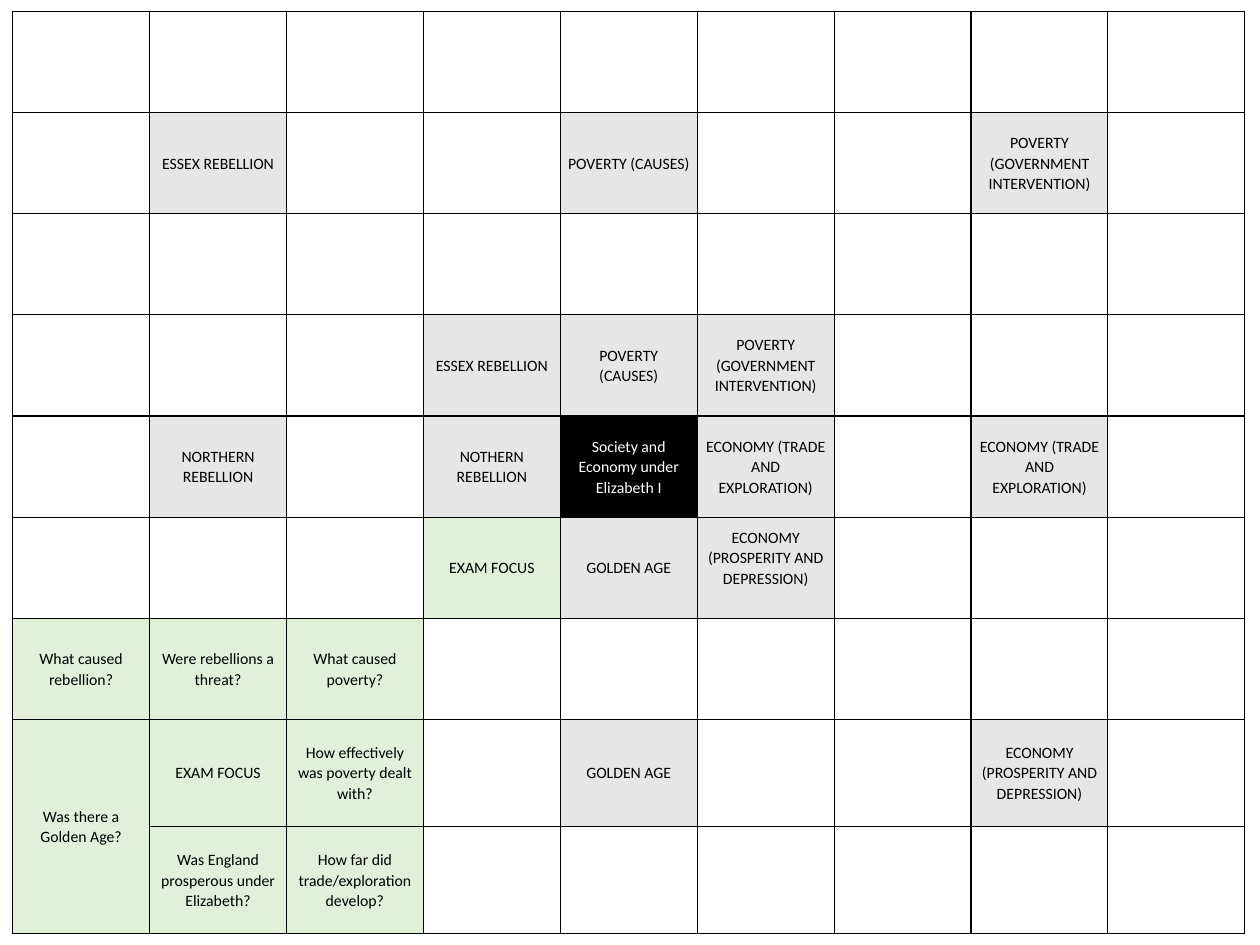
from pptx import Presentation
from pptx.dml.color import RGBColor
from pptx.enum.text import MSO_ANCHOR, PP_ALIGN
from pptx.oxml import parse_xml
from pptx.oxml.ns import nsdecls
from pptx.util import Inches, Pt

MIDDLE = MSO_ANCHOR.MIDDLE
CENTER = PP_ALIGN.CENTER

COLORS = {"topic": "E7E6E6", "exam": "E2F0D9", "centre": "000000",
          "ink": "000000", "light": "FFFFFF"}

# Grid: seven equal rows above two taller ones
COLUMNS, ROWS = 9, 9
LEFT, TOP, WIDTH, HEIGHT = 0.1, 0.09, 9.78, 7.32
TALL_ROWS, TALL_HEIGHT = 2, 0.85
ROW_HEIGHT = (HEIGHT - TALL_ROWS * TALL_HEIGHT) / (ROWS - TALL_ROWS)
BORDER_WIDTH = Pt(0.75)

# Cell contents by (row, column)
TOPICS = {
    (1, 1): "ESSEX REBELLION",
    (1, 4): "POVERTY (CAUSES)",
    (1, 7): "POVERTY (GOVERNMENT INTERVENTION)",
    (3, 3): "ESSEX REBELLION",
    (3, 4): "POVERTY\n(CAUSES)",
    (3, 5): "POVERTY\n(GOVERNMENT INTERVENTION)",
    (4, 1): "NORTHERN REBELLION",
    (4, 3): "NOTHERN REBELLION",
    (4, 5): "ECONOMY (TRADE AND EXPLORATION)",
    (4, 7): "ECONOMY (TRADE AND EXPLORATION)",
    (5, 4): "GOLDEN AGE",
    (5, 5): "ECONOMY\n(PROSPERITY AND DEPRESSION)",
    (7, 4): "GOLDEN AGE",
    (7, 7): "ECONOMY\n(PROSPERITY AND DEPRESSION)",
}
EXAM_QUESTIONS = {
    (5, 3): "EXAM FOCUS",
    (6, 0): "What caused rebellion?",
    (6, 1): "Were rebellions a threat?",
    (6, 2): "What caused poverty?",
    (7, 0): "Was there a Golden Age?",
    (7, 1): "EXAM FOCUS",
    (7, 2): "How effectively was poverty dealt with?",
    (8, 1): "Was England prosperous under Elizabeth?",
    (8, 2): "How far did trade/exploration develop?",
}
CENTRE = {(4, 4): "Society and Economy under Elizabeth I"}


def add_grid(slide):
    grid = slide.shapes.add_table(ROWS, COLUMNS, Inches(LEFT), Inches(TOP),
                                  Inches(WIDTH), Inches(HEIGHT)).table
    grid.first_row = grid.horz_banding = False
    for column in grid.columns:
        column.width = Inches(WIDTH / COLUMNS)
    for index, row in enumerate(grid.rows):
        tall = index >= ROWS - TALL_ROWS
        row.height = Inches(TALL_HEIGHT if tall else ROW_HEIGHT)
    return grid


def outline_cell(cell):
    properties = cell._tc.get_or_add_tcPr()
    for side in "LRTB":
        properties.append(parse_xml(
            f'<a:ln{side} {nsdecls("a")} w="{BORDER_WIDTH}"><a:solidFill>'
            f'<a:srgbClr val="{COLORS["ink"]}"/></a:solidFill></a:ln{side}>'))
    cell.fill.background()


def fill_cells(grid, entries, fill, ink="ink"):
    for (row, column), label in entries.items():
        cell = grid.cell(row, column)
        cell.fill.solid()
        cell.fill.fore_color.rgb = RGBColor.from_string(COLORS[fill])
        cell.vertical_anchor = MIDDLE
        cell.margin_left = cell.margin_right = Inches(0.06)
        cell.margin_top = cell.margin_bottom = 0
        paragraph = cell.text_frame.paragraphs[0]
        paragraph.text = label
        paragraph.alignment = CENTER
        paragraph.line_spacing = 1.07
        paragraph.font.name = "Calibri"
        paragraph.font.size = Pt(9)
        paragraph.font.color.rgb = RGBColor.from_string(COLORS[ink])


def main():
    prs = Presentation()
    prs.slide_width, prs.slide_height = Inches(10), Inches(7.5)
    slide = prs.slides.add_slide(prs.slide_layouts[6])

    # Ruled grid, with one question spanning the last two rows
    grid = add_grid(slide)
    for cell in grid.iter_cells():
        outline_cell(cell)
    grid.cell(7, 0).merge(grid.cell(8, 0))

    # Topics, exam questions and the central theme
    fill_cells(grid, TOPICS, "topic")
    fill_cells(grid, EXAM_QUESTIONS, "exam")
    fill_cells(grid, CENTRE, "centre", "light")
    # The inner prosperity topic sits a little above the middle
    grid.cell(5, 5).margin_bottom = Inches(0.16)

    prs.save("out.pptx")


if __name__ == "__main__":
    main()
